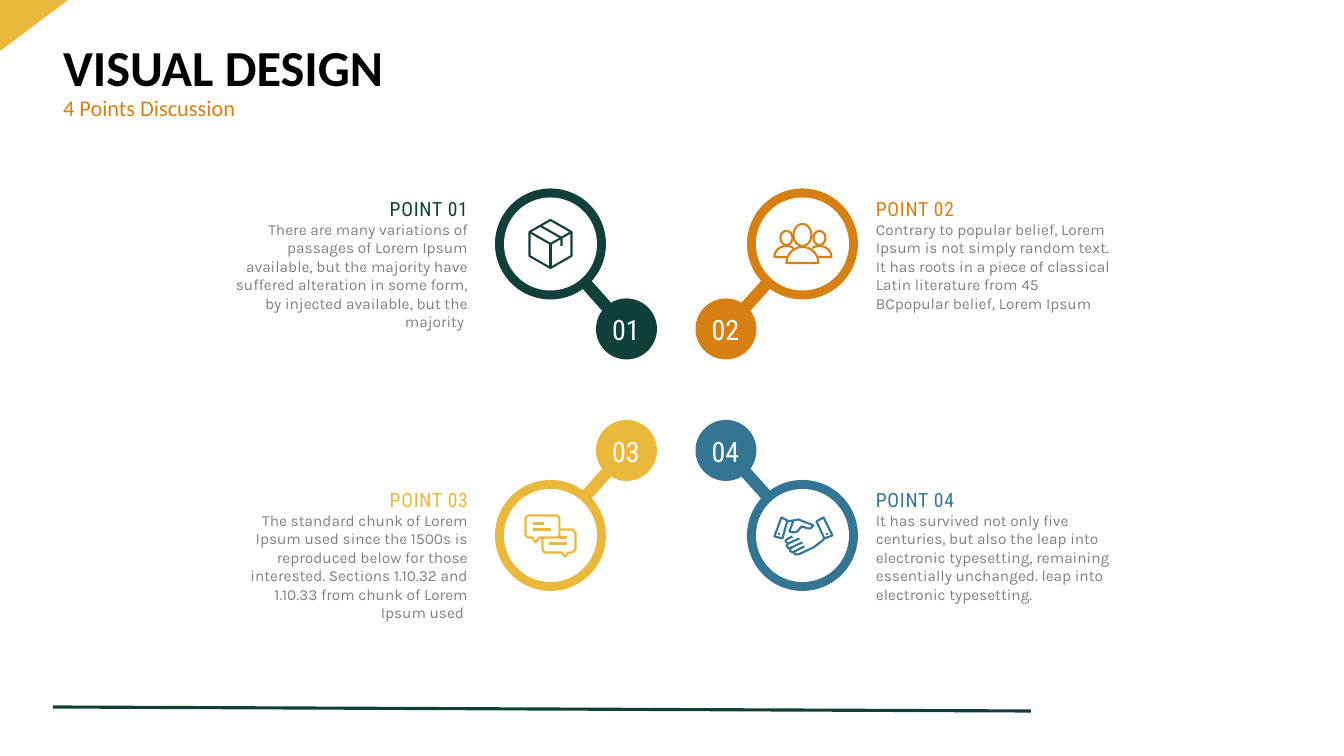
from dataclasses import dataclass
from math import asin, atan2, cos, pi, sin

from lxml import etree
from pptx import Presentation
from pptx.dml.color import RGBColor
from pptx.enum.shapes import MSO_CONNECTOR, MSO_SHAPE
from pptx.enum.text import MSO_ANCHOR, MSO_AUTO_SIZE, PP_ALIGN
from pptx.oxml.ns import qn
from pptx.util import Emu, Pt

SCALE = 914400 / 100.8
LEFT, RIGHT, MID = PP_ALIGN.LEFT, PP_ALIGN.RIGHT, PP_ALIGN.CENTER
TOP, CENTER = MSO_ANCHOR.TOP, MSO_ANCHOR.MIDDLE
FIXED = MSO_AUTO_SIZE.NONE
OVAL, CORNER = MSO_SHAPE.OVAL, MSO_SHAPE.RIGHT_TRIANGLE
STRAIGHT = MSO_CONNECTOR.STRAIGHT

GREEN = RGBColor(0x11, 0x40, 0x3A)
ORANGE = RGBColor(0xD6, 0x80, 0x13)
YELLOW = RGBColor(0xEA, 0xB8, 0x3B)
BLUE = RGBColor(0x34, 0x75, 0x93)
GRAY = RGBColor(0x7F, 0x7F, 0x7F)
BLACK = RGBColor(0, 0, 0)
WHITE = RGBColor(255, 255, 255)

TITLE = {"name": "Calibri", "size": Pt(36), "bold": True}
SUB = {"name": "Calibri", "size": Pt(16), "bold": False}
NUMBER = {"name": "Roboto Condensed", "size": Pt(20)}
HEAD = {"name": "Roboto Condensed", "size": Pt(14)}
BODY = {"name": "Karla", "size": Pt(11)}

RING, HOLE, DISC, NECK = 111, 93, 61, 6

Dots = list[tuple[float, float]]


@dataclass
class Stroke:
    dots: Dots
    closed: bool = False


@dataclass
class Point:
    num: str
    text: str
    color: RGBColor
    big: tuple[float, float]
    small: tuple[float, float]
    top: int
    align: PP_ALIGN
    icon: list[list[Stroke]]


def px(n: float) -> Emu:
    return Emu(round(n * SCALE))


def arc(x: float, y: float, rx: float, ry: float, start: float, end: float, n: int = 24) -> Dots:
    turns = [start + (end - start) * i / n for i in range(n + 1)]
    return [(x + rx * cos(t), y + ry * sin(t)) for t in turns]


def face(x: int, y: int, rx: int, ry: int) -> Stroke:
    return Stroke(arc(x, y, rx, ry, 0, 2 * pi), True)


BOX = [
    [Stroke([(0, -24), (21, -12), (21, 12), (0, 24), (-21, 12), (-21, -12)], True)],
    [Stroke([(0, 0), (21, -12)])],
    [Stroke([(0, 0), (0, 24)])],
    [Stroke([(-21, -12), (0, 0)])],
    [Stroke([(-10, -18), (11, -6), (11, 2)])],
]
PEOPLE = [[
    face(-16, -6, 6, 7),
    face(17, -6, 6, 7),
    face(0, -9, 9, 11),
    Stroke([(-15, 13), *arc(-16, 13, 12, 11, pi, 1.7 * pi)]),
    Stroke([(16, 13), *arc(17, 13, 12, 11, 2 * pi, 1.3 * pi)]),
    Stroke(arc(0, 19, 16, 16, pi, 2 * pi), True),
]]
CHAT = [[
    Stroke([(9, -6), (22, -6), (25, -3), (25, 14), (22, 17), (18, 17), (15, 21),
            (11, 17), (-6, 17), (-8, 14), (-8, 2)]),
    Stroke([(-22, -20), (6, -20), (9, -18), (9, 0), (7, 2), (-11, 2), (-15, 7),
            (-18, 2), (-22, 2), (-25, 0), (-25, -18)], True),
    Stroke([(-17, -12), (-6, -12)]),
    Stroke([(-17, -6), (1, -6)]),
    Stroke([(9, 2), (17, 2)]),
    Stroke([(-1, 8), (17, 8)]),
]]
HANDS = [[
    Stroke([(-21, -18), (-15, -15), (-20, 3), (-28, 1)], True),
    Stroke([(21, -18), (30, 0), (22, 3), (14, -14)], True),
    Stroke([(-15, -14), (-9, -15), (-4, -16), (11, -10), (8, -7), (6, -7), (-1, -9),
            (-5, -4), (-9, -3), (-13, -4), (-9, -15)]),
    Stroke([(-10, 1), (-16, 4), (-17, 6), (-14, 8), (-3, 3)]),
    Stroke([(-14, 8), (-16, 10), (-14, 13), (-11, 12), (0, 7)]),
    Stroke([(-11, 12), (-13, 15), (-10, 17), (2, 11)]),
    Stroke([(-9, 16), (-7, 19), (-4, 19), (11, 12), (19, 6), (22, 3)]),
    Stroke([(-24, -1), (-22, -1)]),
    Stroke([(24, -1), (26, -1)]),
]]

POINTS = [
    Point("01", "There are many variations of passages of Lorem Ipsum available, but the majority "
          "have suffered alteration in some form, by injected available, but the majority ",
          GREEN, (550.5, 244), (626.5, 329), 192, RIGHT, BOX),
    Point("02", "Contrary to popular belief, Lorem Ipsum is not simply random text. It has roots "
          "in a piece of classical Latin literature from 45 BCpopular belief, Lorem Ipsum",
          ORANGE, (802.5, 244), (726, 329), 192, LEFT, PEOPLE),
    Point("03", "The standard chunk of Lorem Ipsum used since the 1500s is reproduced below for "
          "those interested. Sections 1.10.32 and 1.10.33 from chunk of Lorem Ipsum used ",
          YELLOW, (550.5, 535.5), (626.5, 450.5), 483, RIGHT, CHAT),
    Point("04", "It has survived not only five centuries, but also the leap into electronic "
          "typesetting, remaining essentially unchanged. leap into electronic typesetting.",
          BLUE, (802.5, 535.5), (726, 450.5), 483, LEFT, HANDS),
]


def fill(shape, color: RGBColor) -> None:
    shape.shadow.inherit = False
    shape.fill.solid()
    shape.fill.fore_color.rgb = color
    shape.line.fill.background()


def trace(shapes, strokes: list[Stroke], x: float = 0, y: float = 0):
    pen = None
    for stroke in strokes:
        first, *rest = [(px(x + i), px(y + j)) for i, j in stroke.dots]
        if pen is None:
            pen = shapes.build_freeform(*first, scale=1.0)
        else:
            pen.move_to(*first)
        pen.add_line_segments(rest, close=stroke.closed)
    return pen.convert_to_shape()


def write(shape, text: str, style: dict, color: RGBColor, align: PP_ALIGN, anchor: MSO_ANCHOR):
    frame = shape.text_frame
    frame.word_wrap, frame.auto_size, frame.vertical_anchor = True, FIXED, anchor
    para = frame.paragraphs[0]
    para.alignment = align
    run = para.add_run()
    run.text = text
    for key, value in style.items():
        setattr(run.font, key, value)
    run.font.color.rgb = color
    return run


def label(slide, box: tuple[float, float, float, float], *args):
    return write(slide.shapes.add_textbox(*map(px, box)), *args)


def header(shape, box: tuple[int, int, int, int], text: str, style: dict, color: RGBColor) -> None:
    shape.left, shape.top, shape.width, shape.height = map(px, box)
    para = shape.text_frame.paragraphs[0]
    props = para._p.get_or_add_pPr()
    props.set("marL", "0")
    props.set("indent", "0")
    etree.SubElement(props, qn("a:buNone"))
    para.line_spacing, para.space_before = 0.9, Pt(0)
    write(shape, text, style, color, LEFT, CENTER)


def draw(slide, point: Point) -> None:
    (x, y), (u, v) = point.big, point.small
    turn = atan2(v - y, u - x)
    wide, slim = RING / 2, DISC / 2
    a, b = asin(NECK / wide), asin(NECK / slim)
    rim = arc(x, y, wide, wide, turn + a, turn + 2 * pi - a, 90)
    rim += arc(u, v, slim, slim, turn + pi + b, turn + 3 * pi - b, 60)
    fill(trace(slide.shapes, [Stroke(rim, True)]), point.color)
    hole = slide.shapes.add_shape(OVAL, px(x - HOLE / 2), px(y - HOLE / 2), px(HOLE), px(HOLE))
    fill(hole, WHITE)
    for strokes in point.icon:
        part = trace(slide.shapes, strokes, x, y)
        part.shadow.inherit = False
        part.fill.background()
        part.line.color.rgb, part.line.width = point.color, Pt(1.5)
    label(slide, (u - 36.5, v - 16.5, 72, 34), point.num, NUMBER, WHITE, MID, CENTER)
    for text, style, color, width, top, high in (
        (f"POINT {point.num}", HEAD, point.color, 272, point.top, 28),
        (point.text, BODY, GRAY, 259, point.top + 23, 71),
    ):
        left = 866 if point.align == LEFT else 478 - width
        run = label(slide, (left, top, width, high), text, style, color, point.align, TOP)
        if style is HEAD:
            run._r.get_or_add_rPr().set("spc", "50")


def main() -> None:
    deck = Presentation()
    deck.slide_width, deck.slide_height = px(1344), px(756)
    slide = deck.slides.add_slide(deck.slide_layouts[1])
    rule = slide.shapes.add_connector(STRAIGHT, px(53), px(707), px(1031), px(711))
    rule.line.color.rgb, rule.line.width = GREEN, Pt(2.25)
    etree.SubElement(rule._element.spPr, qn("a:effectLst"))
    corner = slide.shapes.add_shape(CORNER, 0, 0, px(68), px(51))
    corner._element.spPr.find(qn("a:xfrm")).set("flipV", "1")
    fill(corner, YELLOW)
    title, sub = slide.placeholders
    header(title, (53, 40, 1239, 60), "VISUAL DESIGN", TITLE, BLACK)
    header(sub, (53, 90, 1239, 39), "4 Points Discussion", SUB, ORANGE)
    for point in POINTS:
        draw(slide, point)
    deck.save("out.pptx")


if __name__ == "__main__":
    main()
